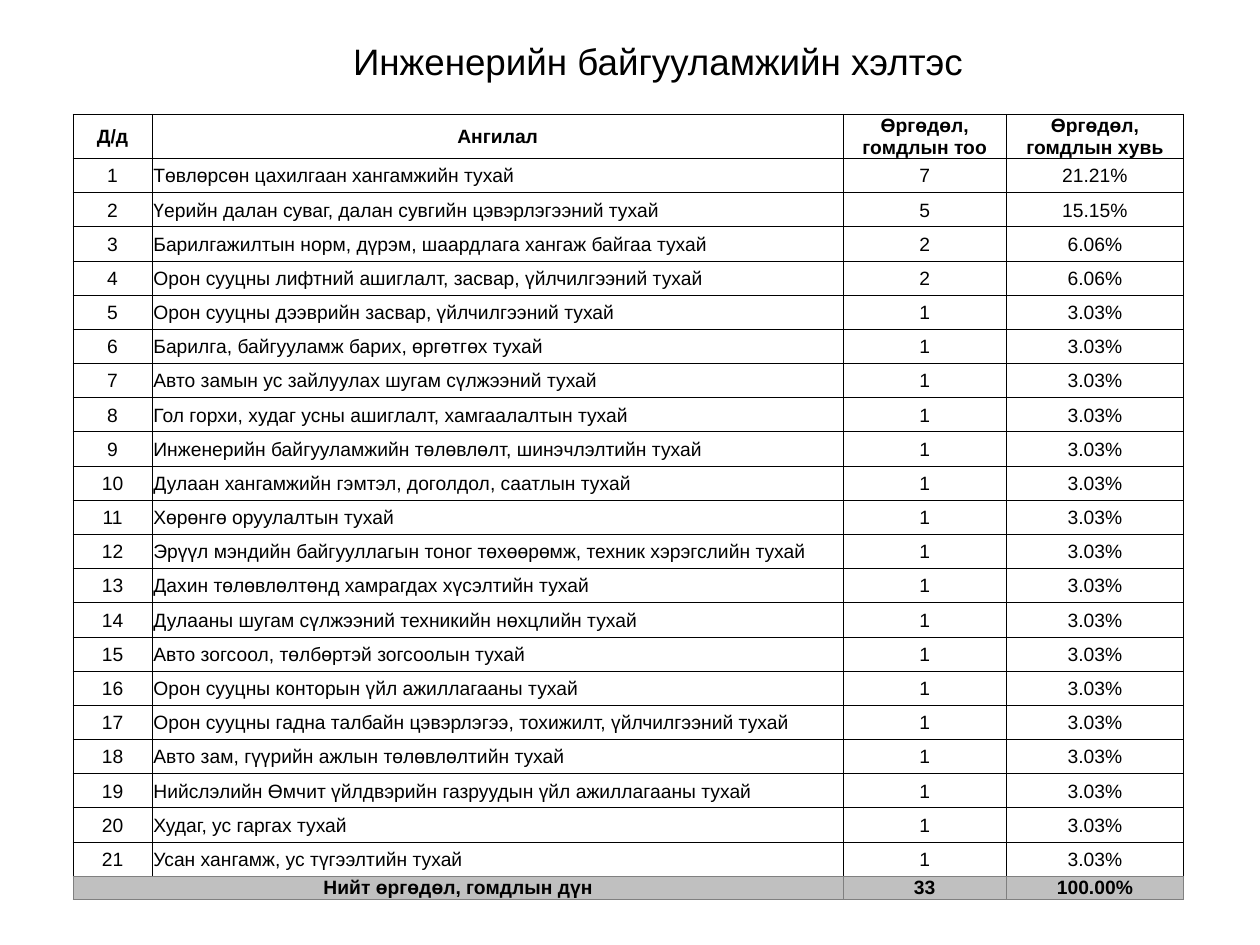
from typing import NamedTuple

import pptx
import pptx.dml.color
import pptx.enum.text
import pptx.oxml
import pptx.oxml.ns
import pptx.util

Pt = pptx.util.Pt
ALIGN = pptx.enum.text.PP_ALIGN
MIDDLE = pptx.enum.text.MSO_ANCHOR.MIDDLE

COLORS = {
    "text": "000000",
    "grid": "000000",
    "total_grid": "808080",
    "plain": "FFFFFF",
    "total": "C0C0C0",
}
FONT = "Arial"
COLUMN_WIDTHS = (45.2, 395, 93, 101.6)
HEADER_HEIGHT, TOPIC_HEIGHT, TOTAL_HEIGHT = 24.5, 19.55, 11
CELL_FORMAT = {
    "margin_left": Pt(0.72),
    "margin_right": Pt(0.72),
    "margin_top": Pt(0.72),
    "margin_bottom": Pt(0),
    "vertical_anchor": MIDDLE,
}
HEADINGS = ("Д/д", "Ангилал", "Өргөдөл, гомдлын тоо", "Өргөдөл, гомдлын хувь")


class Topic(NamedTuple):
    name: str
    count: int = 1


class RowStyle(NamedTuple):
    fill: str = "plain"
    bold: bool = False
    top: str = "grid"
    side: str = "grid"
    bottom: str = "grid"


TOPICS = (
    Topic("Төвлөрсөн цахилгаан хангамжийн тухай", 7),
    Topic("Үерийн далан суваг, далан сувгийн цэвэрлэгээний тухай", 5),
    Topic("Барилгажилтын норм, дүрэм, шаардлага хангаж байгаа тухай", 2),
    Topic("Орон сууцны лифтний ашиглалт, засвар, үйлчилгээний тухай", 2),
    Topic("Орон сууцны дээврийн засвар, үйлчилгээний тухай"),
    Topic("Барилга, байгууламж барих, өргөтгөх тухай"),
    Topic("Авто замын ус зайлуулах шугам сүлжээний тухай"),
    Topic("Гол горхи, худаг усны ашиглалт, хамгаалалтын тухай"),
    Topic("Инженерийн байгууламжийн төлөвлөлт, шинэчлэлтийн тухай"),
    Topic("Дулаан хангамжийн гэмтэл, доголдол, саатлын тухай"),
    Topic("Хөрөнгө оруулалтын тухай"),
    Topic("Эрүүл мэндийн байгууллагын тоног төхөөрөмж, техник хэрэгслийн тухай"),
    Topic("Дахин төлөвлөлтөнд хамрагдах хүсэлтийн тухай"),
    Topic("Дулааны шугам сүлжээний техникийн нөхцлийн тухай"),
    Topic("Авто зогсоол, төлбөртэй зогсоолын тухай"),
    Topic("Орон сууцны конторын үйл ажиллагааны тухай"),
    Topic("Орон сууцны гадна талбайн цэвэрлэгээ, тохижилт, үйлчилгээний тухай"),
    Topic("Авто зам, гүүрийн ажлын төлөвлөлтийн тухай"),
    Topic("Нийслэлийн Өмчит үйлдвэрийн газруудын үйл ажиллагааны тухай"),
    Topic("Худаг, ус гаргах тухай"),
    Topic("Усан хангамж, ус түгээлтийн тухай"),
)
HEADER_STYLE = RowStyle(bold=True)
TOPIC_STYLE = RowStyle()
LAST_TOPIC_STYLE = RowStyle(bottom="total_grid")
TOTAL_STYLE = RowStyle("total", True, "total_grid", "total_grid", "total_grid")


def apply_format(target: object, values: dict) -> None:
    for attribute, value in values.items():
        setattr(target, attribute, value)


def write(paragraph, text: str, size: float, bold: bool, align) -> None:
    paragraph.alignment = align
    run = paragraph.add_run()
    run.text = text
    apply_format(run.font, {"name": FONT, "size": Pt(size), "bold": bold})
    run.font.color.rgb = pptx.dml.color.RGBColor.from_string(COLORS["text"])


def draw_borders(cell, style: RowStyle) -> None:
    properties = cell._tc.get_or_add_tcPr()
    edges = {"L": style.side, "R": style.side, "T": style.top, "B": style.bottom}
    for edge, color in edges.items():
        properties.append(pptx.oxml.parse_xml(
            f'<a:ln{edge} {pptx.oxml.ns.nsdecls("a")} w="{Pt(0.5)}"><a:solidFill>'
            f'<a:srgbClr val="{COLORS[color]}"/></a:solidFill></a:ln{edge}>'
        ))


def fill_row(table, index: int, height: float, texts: tuple, style: RowStyle) -> None:
    table.rows[index].height = Pt(height)
    for column, text in enumerate(texts):
        cell = table.cell(index, column)
        apply_format(cell, CELL_FORMAT)
        draw_borders(cell, style)
        cell.fill.solid()
        cell.fill.fore_color.rgb = pptx.dml.color.RGBColor.from_string(COLORS[style.fill])
        if text:
            is_topic_name = column == 1 and not style.bold
            align = ALIGN.LEFT if is_topic_name else ALIGN.CENTER
            write(cell.text_frame.paragraphs[0], text, 11, style.bold, align)


def add_heading(slide) -> None:
    heading = slide.shapes.title
    apply_format(heading, {
        "left": Pt(54.72), "top": Pt(20.88), "width": Pt(613.44), "height": Pt(30.96),
    })
    apply_format(heading.text_frame, {
        "auto_size": pptx.enum.text.MSO_AUTO_SIZE.NONE,
        "word_wrap": True,
        "vertical_anchor": MIDDLE,
        "margin_left": Pt(36.4),
    })
    paragraph = heading.text_frame.paragraphs[0]
    paragraph.line_spacing = 0.9
    write(paragraph, "Инженерийн байгууламжийн хэлтэс", 21, False, ALIGN.CENTER)


def add_complaints_table(slide) -> None:
    total_row = len(TOPICS) + 1
    height = HEADER_HEIGHT + TOPIC_HEIGHT * len(TOPICS) + TOTAL_HEIGHT
    table = slide.shapes.add_table(
        total_row + 1, len(COLUMN_WIDTHS), Pt(41.76), Pt(65.3),
        Pt(sum(COLUMN_WIDTHS)), Pt(height),
    ).table
    apply_format(table, {"first_row": False, "horz_banding": False})
    for column, width in zip(table.columns, COLUMN_WIDTHS):
        column.width = Pt(width)

    total = sum(topic.count for topic in TOPICS)
    fill_row(table, 0, HEADER_HEIGHT, HEADINGS, HEADER_STYLE)
    for number, topic in enumerate(TOPICS, start=1):
        style = LAST_TOPIC_STYLE if number == len(TOPICS) else TOPIC_STYLE
        texts = (str(number), topic.name, str(topic.count), f"{topic.count / total:.2%}")
        fill_row(table, number, TOPIC_HEIGHT, texts, style)
    table.cell(total_row, 0).merge(table.cell(total_row, 1))
    totals = ("Нийт өргөдөл, гомдлын дүн", "", str(total), f"{1:.2%}")
    fill_row(table, total_row, TOTAL_HEIGHT, totals, TOTAL_STYLE)


def main() -> None:
    presentation = pptx.Presentation()
    apply_format(presentation, {"slide_width": Pt(720), "slide_height": Pt(540)})
    slide = presentation.slides.add_slide(presentation.slide_layouts[5])
    add_heading(slide)
    add_complaints_table(slide)
    presentation.save("out.pptx")


if __name__ == "__main__":
    main()
